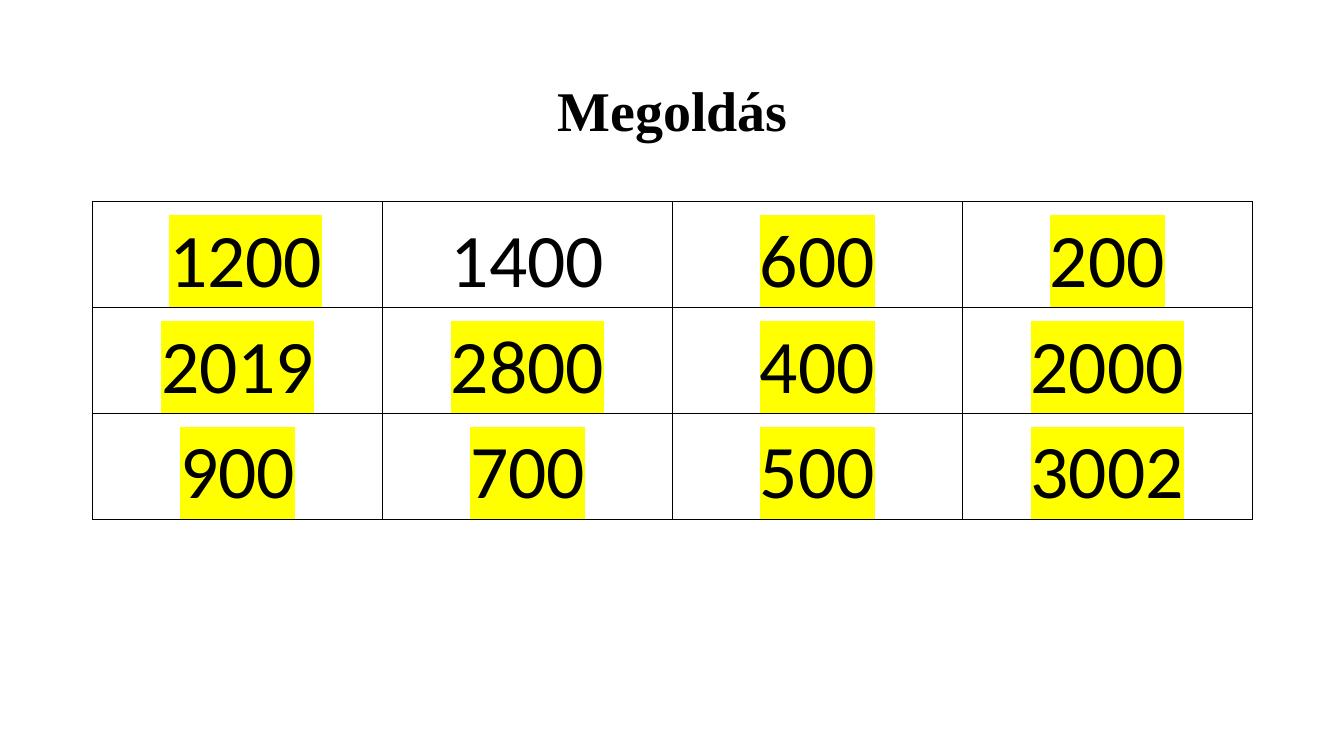
from lxml import etree
from pptx import Presentation
from pptx.dml.color import RGBColor
from pptx.enum.text import MSO_ANCHOR, PP_ALIGN
from pptx.oxml.ns import qn
from pptx.util import Inches, Pt

BLACK = RGBColor(0x00, 0x00, 0x00)
YELLOW = RGBColor(0xFF, 0xFF, 0x00)
CENTER = PP_ALIGN.CENTER
MIDDLE = MSO_ANCHOR.MIDDLE

ANSWERS = [
    ["1200", "1400", "600", "200"],
    ["2019", "2800", "400", "2000"],
    ["900", "700", "500", "3002"],
]
UNMARKED = "1400"
SHIFTED = "1200"


def write_text(frame, text, font, size, bold=False, spacing=1.0, highlight=None):
    paragraph = frame.paragraphs[0]
    paragraph.alignment = CENTER
    paragraph.line_spacing = spacing
    run = paragraph.add_run()
    run.text = text
    run.font.size = Pt(size)
    run.font.bold = bold
    run.font.color.rgb = BLACK
    if highlight is not None:
        # The highlight has to stand between the fill and the typeface
        marker = etree.SubElement(run.font._element, qn("a:highlight"))
        etree.SubElement(marker, qn("a:srgbClr"), val=str(highlight))
    run.font.name = font


def add_borders(cell, color, width):
    properties = cell._tc.get_or_add_tcPr()
    for position, side in enumerate(("lnL", "lnR", "lnT", "lnB")):
        line = etree.Element(qn(f"a:{side}"), w=str(Pt(width)))
        fill = etree.SubElement(line, qn("a:solidFill"))
        etree.SubElement(fill, qn("a:srgbClr"), val=str(color))
        properties.insert(position, line)


def add_title(slide, left, top, width, height):
    title = slide.shapes.add_textbox(Inches(left), Inches(top), Inches(width), Inches(height))
    title.text_frame.word_wrap = True
    title.text_frame.vertical_anchor = MIDDLE
    write_text(title.text_frame, "Megoldás", "Times New Roman", 40, bold=True, spacing=0.9)


def add_answer_table(slide, left, top, width, height):
    answer_table = slide.shapes.add_table(
        len(ANSWERS), len(ANSWERS[0]),
        Inches(left), Inches(top), Inches(width), Inches(height),
    ).table
    answer_table.first_row = False
    answer_table.horz_banding = False
    for row, answers in enumerate(ANSWERS):
        for column, answer in enumerate(answers):
            cell = answer_table.cell(row, column)
            cell.margin_left = Inches(0.23 if answer == SHIFTED else 0.07)
            cell.margin_right = Inches(0.07)
            cell.margin_top = cell.margin_bottom = 0
            cell.fill.background()
            add_borders(cell, BLACK, 1)
            write_text(cell.text_frame, answer, "Calibri", 54, spacing=1.15,
                       highlight=None if answer == UNMARKED else YELLOW)


def main():
    presentation = Presentation()
    presentation.slide_width = Inches(13.33)
    presentation.slide_height = Inches(7.5)
    slide = presentation.slides.add_slide(presentation.slide_layouts[6])
    add_title(slide, 0.92, 0.4, 11.5, 1.45)
    add_answer_table(slide, 0.92, 2, 11.5, 3.15)
    presentation.save("out.pptx")


if __name__ == "__main__":
    main()
